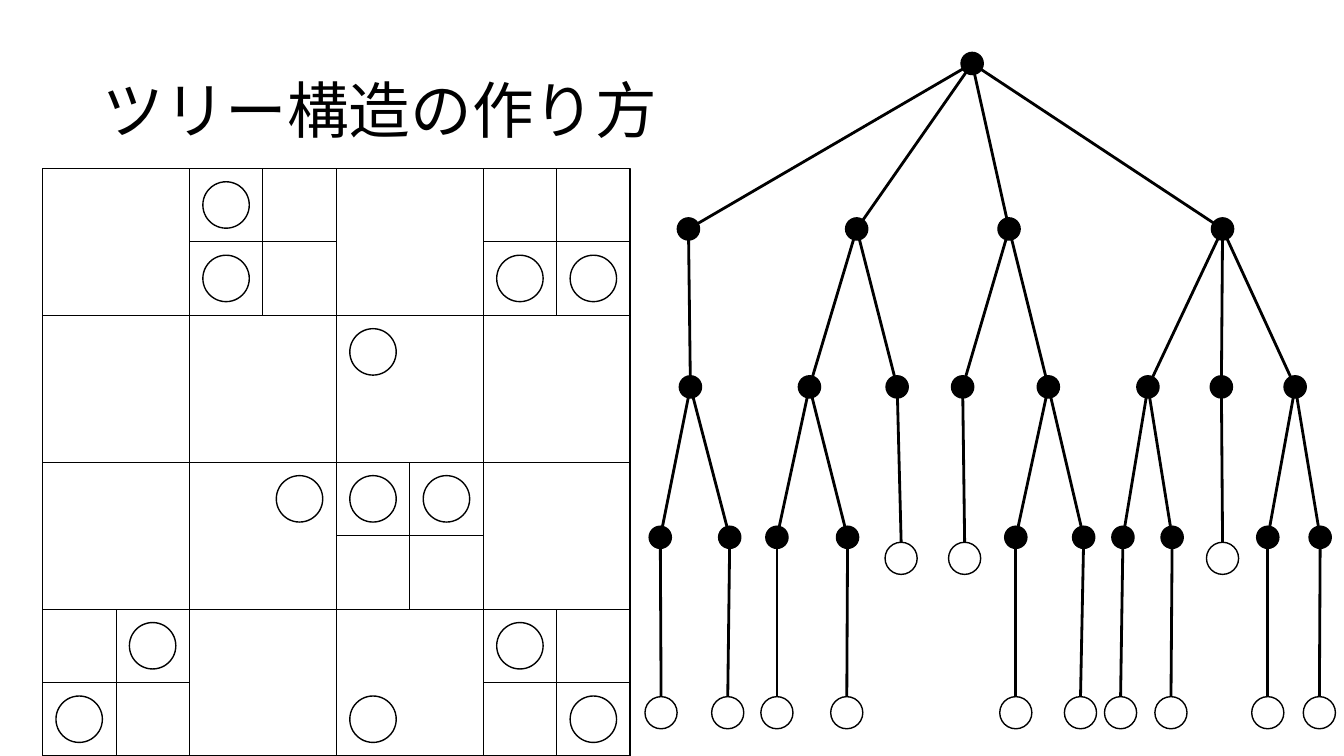
from lxml import etree
from pptx import Presentation
from pptx.dml.color import RGBColor
from pptx.enum import shapes, text
from pptx.oxml import ns
from pptx.util import Cm, Pt

COLORS = {"ink": "000000"}

# Quadtree grid, lengths in cm
GRID_LEFT, GRID_TOP, GRID_SIZE = 1.07, 4.24, 14.81
CELL = GRID_SIZE / 4
HALF = CELL / 2
PARTICLE_SIZE = 1.17
SPLIT_CELLS = [(1, 0), (3, 0), (2, 2), (0, 3), (3, 3)]  # column, row
PARTICLES = [  # column, row in half cells
    (2, 0), (2, 1), (6, 1), (7, 1), (4, 2), (3, 4), (4, 4),
    (5, 4), (1, 6), (6, 6), (0, 7), (4, 7), (7, 7),
]

# Tree: a node is (x, children), a leaf is its x alone
DOT_SIZE, LEAF_SIZE = 0.56, 0.81
LEVELS = [1.6, 5.77, 9.75, 13.54]
LEAF_Y = {3: 14.07, 4: 17.96}
TREE = (24.5, [
    (17.35, [(17.4, [(16.64, [16.66]), (18.39, [18.34])])]),
    (21.59, [(20.4, [(19.58, [19.58]), (21.36, [21.34])]),
             (22.61, [22.71])]),
    (25.43, [(24.26, [24.31]),
             (26.42, [(25.6, [25.6]), (27.31, [27.23])])]),
    (30.81, [(28.93, [(28.3, [28.24]), (29.54, [29.51])]),
             (30.78, [30.81]),
             (32.64, [(31.95, [31.95]), (33.27, [33.25])])]),
])


def color(name):
    return RGBColor.from_string(COLORS[name])


def add_line(container, start, end, width):
    line = container.add_connector(
        shapes.MSO_CONNECTOR.STRAIGHT,
        Cm(start[0]), Cm(start[1]), Cm(end[0]), Cm(end[1]))
    line.line.color.rgb = color("ink")
    line.line.width = Pt(width)
    etree.SubElement(line._element.spPr, ns.qn("a:effectLst"))


def add_outline(container, kind, center, size, filled=False):
    shape = container.add_shape(
        kind, Cm(center[0] - size / 2), Cm(center[1] - size / 2),
        Cm(size), Cm(size))
    shape.shadow.inherit = False
    if filled:
        shape.fill.solid()
        shape.fill.fore_color.rgb = color("ink")
    else:
        shape.fill.background()
    shape.line.color.rgb = color("ink")
    shape.line.width = Pt(1)


def add_circle(container, center, size, filled=False):
    add_outline(container, shapes.MSO_SHAPE.OVAL, center, size, filled)


def add_title(slide, wording):
    title = slide.shapes.title
    title.left, title.top = Cm(2.33), Cm(1.01)
    title.width, title.height = Cm(29.21), Cm(3.68)
    frame = title.text_frame
    frame.word_wrap = True
    frame.vertical_anchor = text.MSO_ANCHOR.MIDDLE
    paragraph = frame.paragraphs[0]
    paragraph.alignment = text.PP_ALIGN.LEFT
    paragraph.line_spacing = 0.9
    run = paragraph.add_run()
    run.text = wording
    run.font.name = "Calibri"
    run.font.size = Pt(44)
    run.font.color.rgb = color("ink")


def add_grid(slide):
    group = slide.shapes.add_group_shape().shapes
    right, bottom = GRID_LEFT + GRID_SIZE, GRID_TOP + GRID_SIZE
    middle = (GRID_LEFT + GRID_SIZE / 2, GRID_TOP + GRID_SIZE / 2)
    add_outline(group, shapes.MSO_SHAPE.RECTANGLE, middle, GRID_SIZE)

    # Main cells
    for step in range(1, 4):
        x, y = GRID_LEFT + step * CELL, GRID_TOP + step * CELL
        add_line(group, (x, GRID_TOP), (x, bottom), 0.5)
        add_line(group, (GRID_LEFT, y), (right, y), 0.5)

    # Cells split into quarters
    for column, row in SPLIT_CELLS:
        x, y = GRID_LEFT + column * CELL, GRID_TOP + row * CELL
        add_line(group, (x + HALF, y), (x + HALF, y + CELL), 0.5)
        add_line(group, (x, y + HALF), (x + CELL, y + HALF), 0.5)

    # Particles
    for column, row in PARTICLES:
        center = (GRID_LEFT + (column + 0.5) * HALF,
                  GRID_TOP + (row + 0.5) * HALF)
        add_circle(group, center, PARTICLE_SIZE)


def add_tree(container, node, level=0):
    x, children = node
    center = (x, LEVELS[level])
    for child in children:
        if isinstance(child, tuple):
            add_line(container, center, (child[0], LEVELS[level + 1]), 2)
            add_tree(container, child, level + 1)
        else:
            leaf_y = LEAF_Y[level + 1]
            add_line(container, center, (child, leaf_y - LEAF_SIZE / 2), 2)
            add_circle(container, (child, leaf_y), LEAF_SIZE)
    add_circle(container, center, DOT_SIZE, filled=True)


def main():
    presentation = Presentation()
    presentation.slide_width = Cm(33.87)
    presentation.slide_height = Cm(19.05)
    slide = presentation.slides.add_slide(presentation.slide_layouts[5])
    add_title(slide, "ツリー構造の作り方")
    add_grid(slide)
    add_tree(slide.shapes, TREE)
    presentation.save("out.pptx")


if __name__ == "__main__":
    main()
